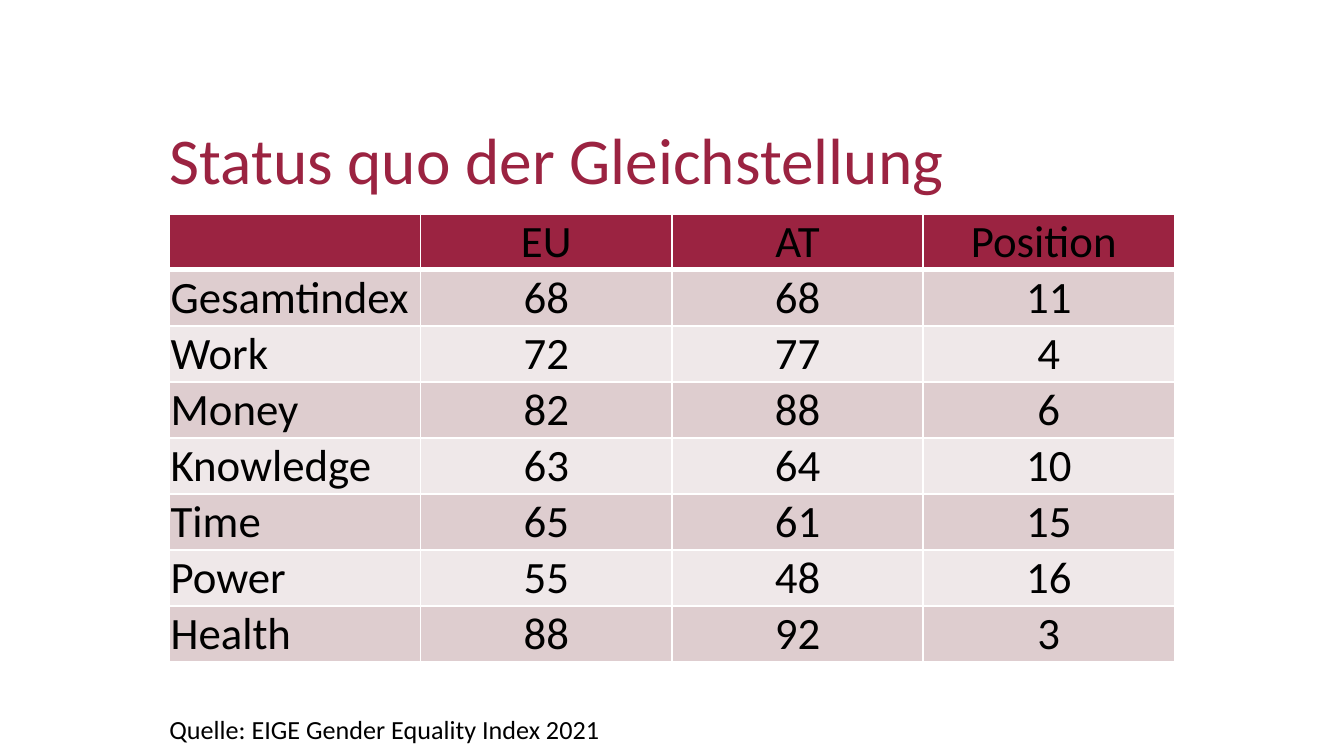
from lxml.etree import SubElement
from pptx import Presentation
from pptx.dml.color import RGBColor
from pptx.enum.text import MSO_ANCHOR, MSO_AUTO_SIZE, PP_ALIGN
from pptx.oxml.ns import qn
from pptx.util import Inches, Pt

WINE, ROSE, PALE, BLACK, WHITE = "9B2341", "DECDCF", "EFE8E9", "000000", "FFFFFF"
LEFT, WIDTH, ROW_HEIGHT = 1.26, 7.48, 0.41


def add_text(frame, text, size, color, align=PP_ALIGN.LEFT):
    paragraph = frame.paragraphs[0]
    paragraph.alignment = align
    run = paragraph.add_run()
    run.text = text
    run.font.name = "Calibri"
    run.font.size = Pt(size)
    run.font.bold = False
    run.font.color.rgb = RGBColor.from_string(color)


def add_border(cell, side, points):
    line = SubElement(cell._tc.get_or_add_tcPr(), qn(f"a:ln{side}"), w=str(Pt(points)))
    fill = SubElement(line, qn("a:solidFill"))
    SubElement(fill, qn("a:srgbClr"), val=WHITE)


# Widescreen slide, 16:9
presentation = Presentation()
presentation.slide_width, presentation.slide_height = Inches(10), Inches(10 * 9 / 16)
slide = presentation.slides.add_slide(presentation.slide_layouts[5])

# Title and source line share the table's left edge and width
heading = slide.shapes.title
heading.left, heading.top = Inches(LEFT), Inches(0.89)
heading.width, heading.height = Inches(WIDTH), Inches(0.74)
source = slide.shapes.add_textbox(Inches(LEFT), Inches(5.31), Inches(WIDTH), Inches(0.3))
for part, text, size, color in (
    (heading, "Status quo der Gleichstellung", 35, WINE),
    (source, "Quelle: EIGE Gender Equality Index 2021", 14, BLACK),
):
    frame = part.text_frame
    frame.margin_left = frame.margin_right = frame.margin_top = frame.margin_bottom = 0
    frame.word_wrap = True
    frame.auto_size = MSO_AUTO_SIZE.NONE
    frame.vertical_anchor = MSO_ANCHOR.TOP
    add_text(frame, text, size, color)

# Index table
scores = [
    ("", "EU", "AT", "Position "),
    ("Gesamtindex", "68", "68", "11"),
    ("Work", "72", "77", "4"),
    ("Money", "82", "88", "6"),
    ("Knowledge", "63", "64", "10"),
    ("Time", "65", "61", "15"),
    ("Power", "55", "48", "16"),
    ("Health", "88", "92", "3"),
]
index_table = slide.shapes.add_table(
    len(scores), len(scores[0]), Inches(LEFT), Inches(1.59),
    Inches(WIDTH), Inches(ROW_HEIGHT * len(scores))
).table

for row, values in enumerate(scores):
    row_color = WINE if row == 0 else ROSE if row % 2 else PALE
    for column, value in enumerate(values):
        cell = index_table.cell(row, column)
        cell.margin_left = cell.margin_right = cell.margin_top = Inches(0.01)
        cell.margin_bottom = 0
        cell.vertical_anchor = MSO_ANCHOR.BOTTOM
        # The rule under the header row is thicker
        for side in "LRTB":
            under_header = (row, side) in ((0, "B"), (1, "T"))
            add_border(cell, side, 3 if under_header else 1)
        cell.fill.solid()
        cell.fill.fore_color.rgb = RGBColor.from_string(row_color)
        if value:
            align = PP_ALIGN.CENTER if column else PP_ALIGN.LEFT
            add_text(cell.text_frame, value, 24, BLACK, align)

presentation.save("out.pptx")
